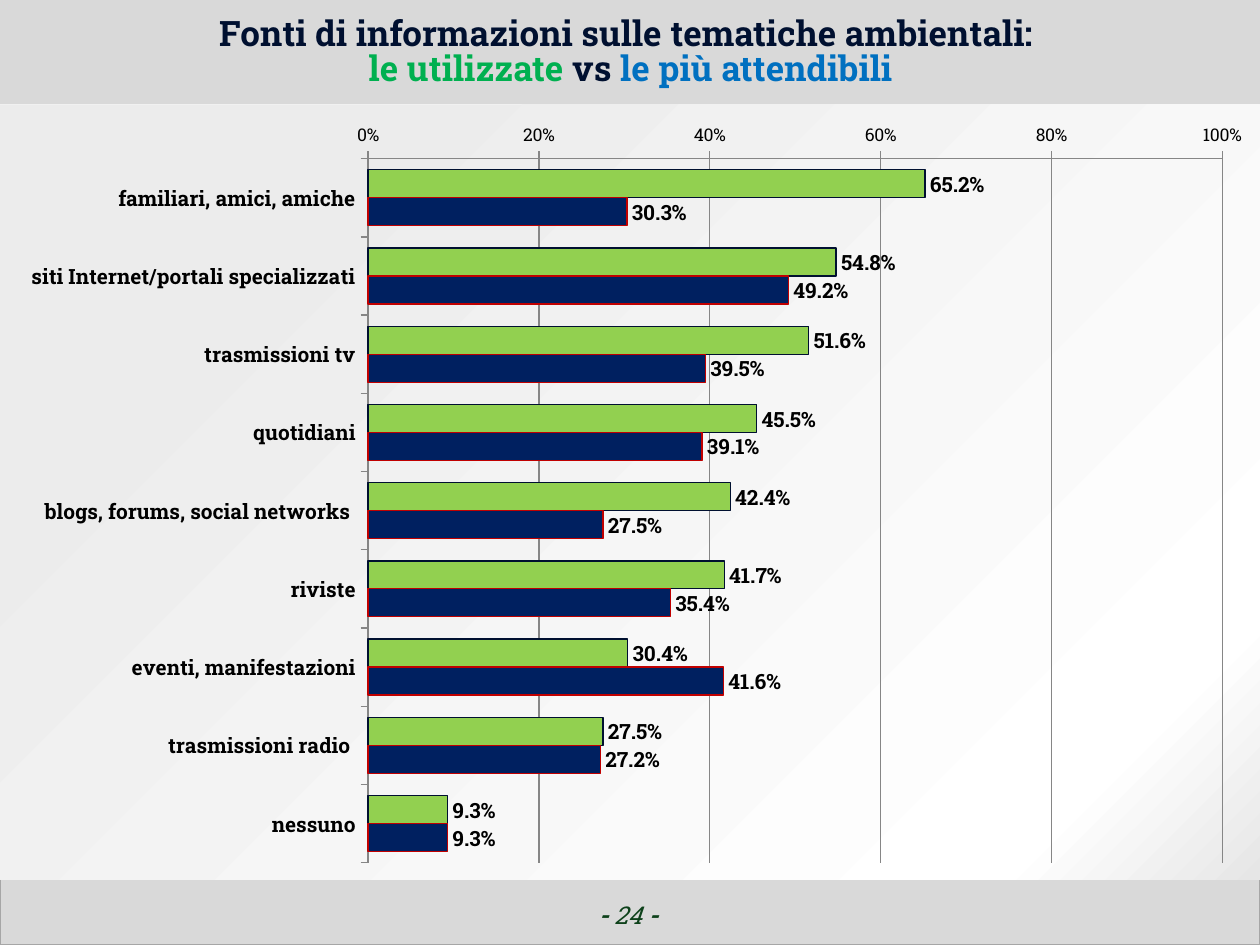
from dataclasses import dataclass

from lxml.etree import SubElement
from pptx import Presentation
from pptx.chart.data import CategoryChartData
from pptx.dml.color import RGBColor
from pptx.enum.chart import XL_CHART_TYPE, XL_LABEL_POSITION, XL_TICK_MARK
from pptx.enum.shapes import MSO_SHAPE
from pptx.enum.text import MSO_ANCHOR, PP_ALIGN
from pptx.oxml import parse_xml
from pptx.oxml.ns import nsdecls, qn
from pptx.util import Inches, Pt

WIDTH, HEIGHT = 10, 7.5
HEADER_HEIGHT, FOOTER_TOP = 0.83, 6.98


@dataclass(frozen=True)
class Theme:
    font: str = "Roboto Slab"
    band: str = "D9D9D9"
    band_line: str = "A6A6A6"
    title: str = "001030"
    used: str = "00B050"
    reliable: str = "0070C0"
    page: str = "0D411A"
    text: str = "000000"
    grid: str = "868686"
    used_bar: str = "92D050"
    used_line: str = "001030"
    reliable_bar: str = "002060"
    reliable_line: str = "C00000"
    title_size: int = 20
    page_size: int = 14
    label_size: int = 12
    axis_size: int = 10


THEME = Theme()
BACKDROP_STOPS = [(0, "E6E6E6"), (13, "FFFFFF"), (82, "ECECEC")]
SOURCES = [
    ("familiari, amici, amiche", 0.652, 0.303),
    ("siti Internet/portali specializzati", 0.548, 0.492),
    ("trasmissioni tv", 0.516, 0.395),
    ("quotidiani", 0.455, 0.391),
    ("blogs, forums, social networks ", 0.424, 0.275),
    ("riviste", 0.417, 0.354),
    ("eventi, manifestazioni", 0.304, 0.416),
    ("trasmissioni radio ", 0.275, 0.272),
    ("nessuno", 0.093, 0.093),
]


def color(value):
    return RGBColor.from_string(value)


def set_font(font, size, value, bold=False):
    font.name, font.size, font.bold = THEME.font, Pt(size), bold
    font.color.rgb = color(value)


def set_line(line, value, width=0.75):
    line.color.rgb = color(value)
    line.width = Pt(width)


def add_band(slide, top, height, line=None):
    shape = slide.shapes.add_shape(
        MSO_SHAPE.RECTANGLE, 0, Inches(top), Inches(WIDTH), Inches(height))
    shape.shadow.inherit = False
    shape.fill.solid()
    shape.fill.fore_color.rgb = color(THEME.band)
    if line:
        set_line(shape.line, line)
    else:
        shape.line.fill.background()
    return shape


def fill_from_corner(shape, stops):
    """Fill with a circular gradient that starts at the bottom right corner."""
    stop_xml = "".join(
        f'<a:gs pos="{position * 1000}"><a:srgbClr val="{value}"/></a:gs>'
        for position, value in stops)
    gradient = parse_xml(
        f'<a:gradFill {nsdecls("a")} rotWithShape="1"><a:gsLst>{stop_xml}</a:gsLst>'
        '<a:path path="circle"><a:fillToRect l="100000" t="100000"/></a:path>'
        '</a:gradFill>')
    properties = shape.element.spPr
    properties.replace(properties.find(qn("a:solidFill")), gradient)


def add_title(slide):
    title = slide.shapes.title
    title.left, title.top = Inches(0.16), Inches(0.03)
    title.width, title.height = Inches(9.69), Inches(0.79)
    title.element.getparent().append(title.element)  # in front of the bands
    frame = title.text_frame
    frame.vertical_anchor = MSO_ANCHOR.MIDDLE
    paragraph = frame.paragraphs[0]
    paragraph.alignment = PP_ALIGN.CENTER
    paragraph.line_spacing = Pt(THEME.title_size)
    set_font(paragraph.font, THEME.title_size, THEME.title, bold=True)
    paragraph.add_run().text = "Fonti di informazioni sulle tematiche ambientali: "
    paragraph.add_line_break()
    for text, value in (("le utilizzate ", THEME.used), ("vs ", THEME.title),
                        ("le più attendibili", THEME.reliable)):
        run = paragraph.add_run()
        run.text = text
        run.font.color.rgb = color(value)


def add_page_number(slide):
    box = slide.shapes.add_textbox(
        Inches(3.82), Inches(7.09), Inches(2.33), Inches(0.52))
    box.text_frame.word_wrap = True
    paragraph = box.text_frame.paragraphs[0]
    paragraph.alignment = PP_ALIGN.CENTER
    set_font(paragraph.font, THEME.page_size, THEME.page)
    paragraph.font.italic = True
    for text, bold in (("- ", True), ("24 ", False), ("-", True)):
        run = paragraph.add_run()
        run.text = text
        run.font.bold = bold


def place_plot(chart, **shares):
    """Fix the inner plot area, given as shares of the chart's size."""
    plot_area = chart.element.find(".//" + qn("c:plotArea"))
    layout = plot_area.find(qn("c:layout"))
    if layout is None:
        layout = plot_area.makeelement(qn("c:layout"))
        plot_area.insert(0, layout)
    manual = SubElement(layout, qn("c:manualLayout"))
    settings = {"layoutTarget": "inner", "xMode": "edge", "yMode": "edge", **shares}
    for name, value in settings.items():
        SubElement(manual, qn("c:" + name)).set("val", str(value))


def format_axes(chart):
    categories, values = chart.category_axis, chart.value_axis
    categories.reverse_order = True
    set_font(categories.tick_labels.font, THEME.label_size, THEME.text, bold=True)
    values.minimum_scale, values.maximum_scale, values.major_unit = 0, 1, 0.2
    values.has_major_gridlines = True
    set_line(values.major_gridlines.format.line, THEME.grid)
    values.tick_labels.number_format = "0%"
    values.tick_labels.number_format_is_linked = False
    set_font(values.tick_labels.font, THEME.axis_size, THEME.text)
    for axis in (categories, values):
        axis.major_tick_mark = XL_TICK_MARK.OUTSIDE
        set_line(axis.format.line, THEME.grid)


def format_series(series, fill, line):
    series.format.fill.solid()
    series.format.fill.fore_color.rgb = color(fill)
    set_line(series.format.line, line)
    labels = series.data_labels
    labels.show_value = True
    labels.number_format, labels.number_format_is_linked = "0.0%", False
    labels.position = XL_LABEL_POSITION.OUTSIDE_END
    set_font(labels.font, THEME.label_size, THEME.text, bold=True)


def add_sources_chart(slide):
    names, used, reliable = zip(*SOURCES)
    data = CategoryChartData(number_format="0.0%")
    data.categories = names
    data.add_series("Series 1", used)
    data.add_series("Series 2", reliable)
    chart = slide.shapes.add_chart(
        XL_CHART_TYPE.BAR_CLUSTERED, Inches(0.03), Inches(HEADER_HEIGHT),
        Inches(9.97), Inches(6.14), data).chart
    chart.has_legend = chart.has_title = False
    set_font(chart.font, THEME.axis_size, THEME.text)
    plot = chart.plots[0]
    plot.gap_width, plot.overlap, plot.vary_by_categories = 80, 0, False
    format_axes(chart)
    styles = ((THEME.used_bar, THEME.used_line),
              (THEME.reliable_bar, THEME.reliable_line))
    for series, style in zip(plot.series, styles):
        format_series(series, *style)
    place_plot(chart, x=0.29, y=0.07, w=0.68, h=0.91)


def main():
    presentation = Presentation()
    presentation.slide_width, presentation.slide_height = Inches(WIDTH), Inches(HEIGHT)
    slide = presentation.slides.add_slide(presentation.slide_layouts[5])
    add_band(slide, 0, HEADER_HEIGHT)
    add_band(slide, FOOTER_TOP, HEIGHT - FOOTER_TOP, THEME.band_line)
    backdrop = add_band(slide, HEADER_HEIGHT, FOOTER_TOP - HEADER_HEIGHT)
    fill_from_corner(backdrop, BACKDROP_STOPS)
    add_page_number(slide)
    add_title(slide)
    add_sources_chart(slide)
    presentation.save("out.pptx")


if __name__ == "__main__":
    main()
